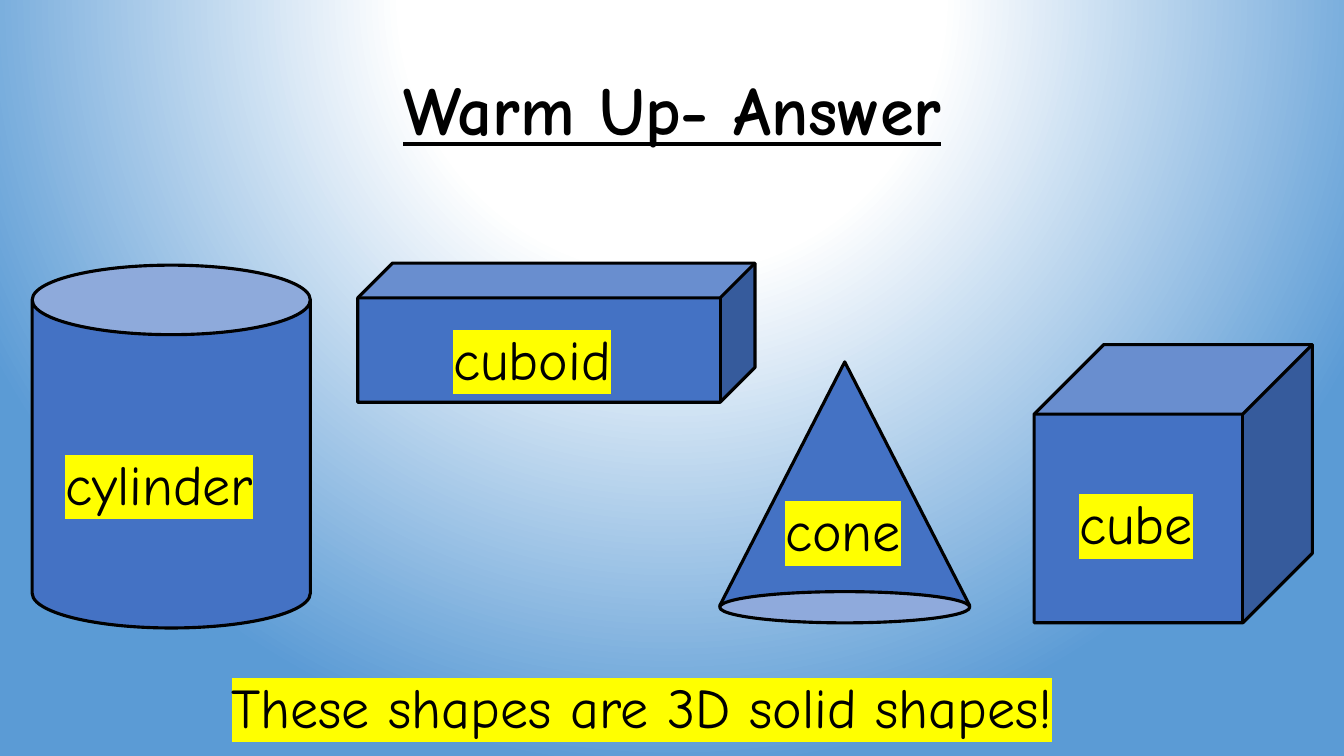
from dataclasses import dataclass

from lxml.etree import SubElement
from pptx import Presentation
from pptx.dml.color import RGBColor as RGB
from pptx.enum.shapes import MSO_SHAPE as Kind
from pptx.enum.text import MSO_ANCHOR as Anchor
from pptx.enum.text import MSO_AUTO_SIZE as Fit
from pptx.enum.text import PP_ALIGN as Align
from pptx.oxml.ns import qn
from pptx.shapes.shapetree import GroupShapes, SlideShapes
from pptx.slide import Slide
from pptx.util import Pt

FONT = "Comic Neue"
COLORS = {
    "ink": "000000",
    "solid": "4472C4",
    "base": "8FAADC",
    "mark": "FFFF00",
    "glow": "FFFFFF",
    "sky": "5B9BD5",
}
LABEL_H = 55.4


@dataclass(frozen=True)
class Solid:
    kind: Kind
    left: float
    top: float
    width: float
    height: float
    fill: str = "solid"


@dataclass(frozen=True)
class Label:
    text: str
    left: float
    top: float
    width: float


SOLIDS = [
    Solid(Kind.CAN, 23, 189.4, 198.7, 259.2),
    Solid(Kind.CUBE, 738.7, 246.2, 198.7, 198.7),
    Solid(Kind.CUBE, 255.6, 187.9, 283.7, 99.4),
]
CONE = [
    Solid(Kind.ISOSCELES_TRIANGLE, 514.1, 258.5, 178.6, 174.2),
    Solid(Kind.OVAL, 514.1, 422.6, 178.6, 22.3, "base"),
]
CLAIM = Label("These shapes are 3D solid shapes!", 158.4, 476.6, 656.6)
NAMES = [
    Label("cylinder", 39.6, 317.5, 165.6),
    Label("cuboid", 316.8, 228.2, 136.8),
    Label("cube", 763.9, 345.6, 102.2),
    Label("cone", 553.7, 350.6, 100.1),
]


def paint_back(slide: Slide) -> None:
    """Fill the background with a round glow centred above the slide."""
    fill = slide.background.fill
    fill.gradient()
    grad = slide.background._cSld.find(".//" + qn("a:gradFill"))
    for part in list(grad):
        grad.remove(part)
    stops = SubElement(grad, qn("a:gsLst"))
    for pos, name in ((0, "glow"), (35, "glow"), (100, "sky")):
        stop = SubElement(stops, qn("a:gs"), pos=str(pos * 1000))
        SubElement(stop, qn("a:srgbClr"), val=COLORS[name])
    shade = SubElement(grad, qn("a:path"), path="circle")
    SubElement(shade, qn("a:fillToRect"), l="50000", t="-80000", r="50000", b="180000")


def add_solid(shapes: SlideShapes | GroupShapes, item: Solid) -> None:
    shape = shapes.add_shape(
        item.kind, Pt(item.left), Pt(item.top), Pt(item.width), Pt(item.height)
    )
    shape.shadow.inherit = False
    shape.fill.solid()
    shape.fill.fore_color.rgb = RGB.from_string(COLORS[item.fill])
    shape.line.color.rgb = RGB.from_string(COLORS["ink"])
    shape.line.width = Pt(2.25)


def add_label(slide: Slide, item: Label) -> None:
    """Add one line of text on a yellow highlight."""
    box = slide.shapes.add_textbox(
        Pt(item.left), Pt(item.top), Pt(item.width), Pt(LABEL_H)
    )
    frame = box.text_frame
    frame.word_wrap = False
    frame.auto_size = Fit.SHAPE_TO_FIT_TEXT
    para = frame.paragraphs[0]
    run = para.add_run()
    run.text = item.text
    para.font.name = FONT
    para.font.size = Pt(40)
    para.font.color.rgb = RGB.from_string(COLORS["ink"])
    mark = SubElement(run._r.get_or_add_rPr(), qn("a:highlight"))
    SubElement(mark, qn("a:srgbClr"), val=COLORS["mark"])


def add_title(slide: Slide, text: str) -> None:
    box = slide.shapes.add_textbox(Pt(66.2), Pt(28.8), Pt(828), Pt(104.4))
    frame = box.text_frame
    frame.word_wrap = True
    frame.vertical_anchor = Anchor.MIDDLE
    para = frame.paragraphs[0]
    para.text = text
    para.alignment = Align.CENTER
    para.line_spacing = 0.9
    font = para.font
    font.name = FONT
    font.size = Pt(49)
    font.bold = True
    font.underline = True
    font.color.rgb = RGB.from_string(COLORS["ink"])


def main() -> None:
    deck = Presentation()
    deck.slide_width, deck.slide_height = Pt(960), Pt(540)
    slide = deck.slides.add_slide(deck.slide_layouts[6])
    paint_back(slide)
    add_title(slide, "Warm Up- Answer")
    add_label(slide, CLAIM)
    for item in SOLIDS:
        add_solid(slide.shapes, item)
    cone = slide.shapes.add_group_shape()
    for item in CONE:
        add_solid(cone.shapes, item)
    for name in NAMES:
        add_label(slide, name)
    deck.save("out.pptx")


if __name__ == "__main__":
    main()
